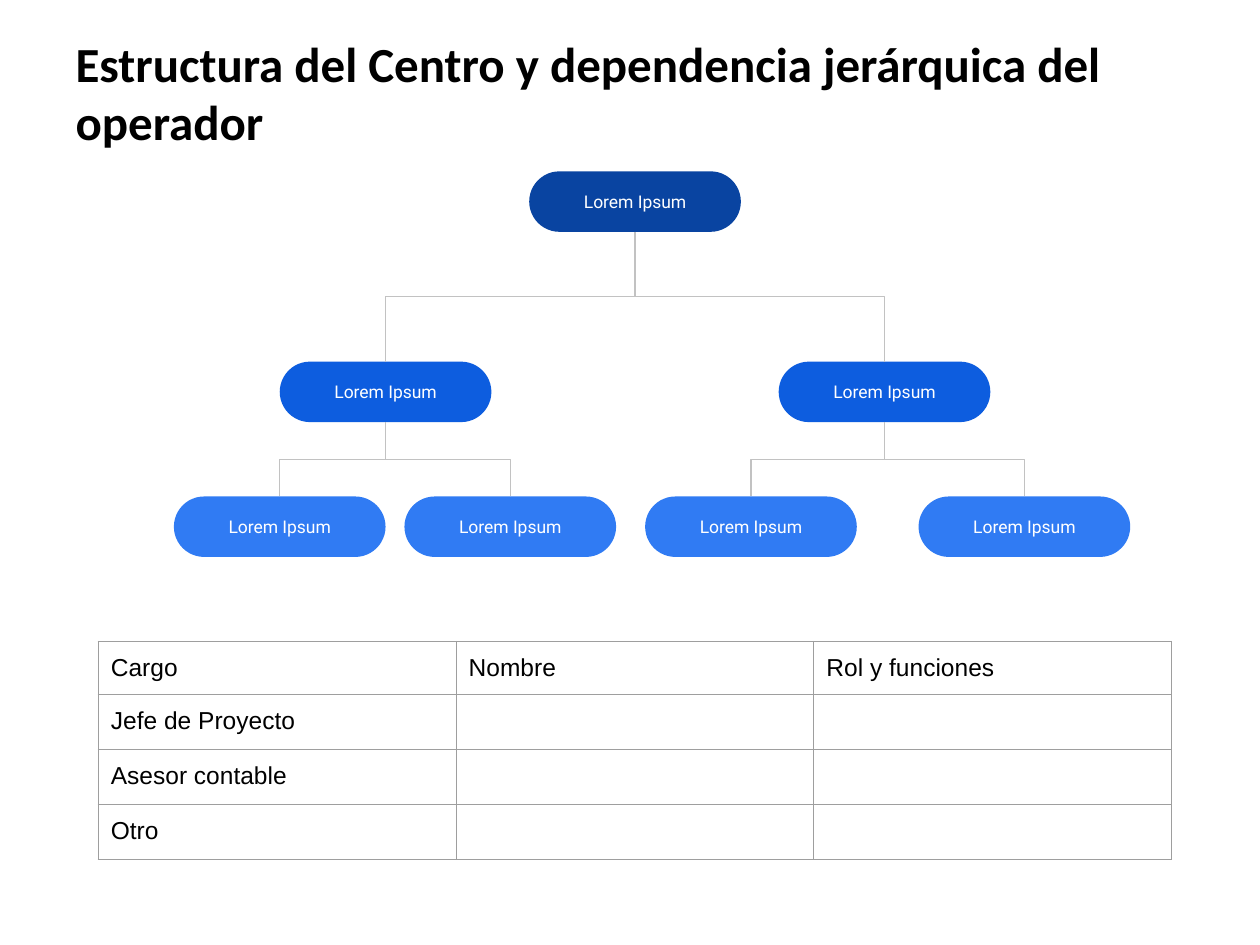
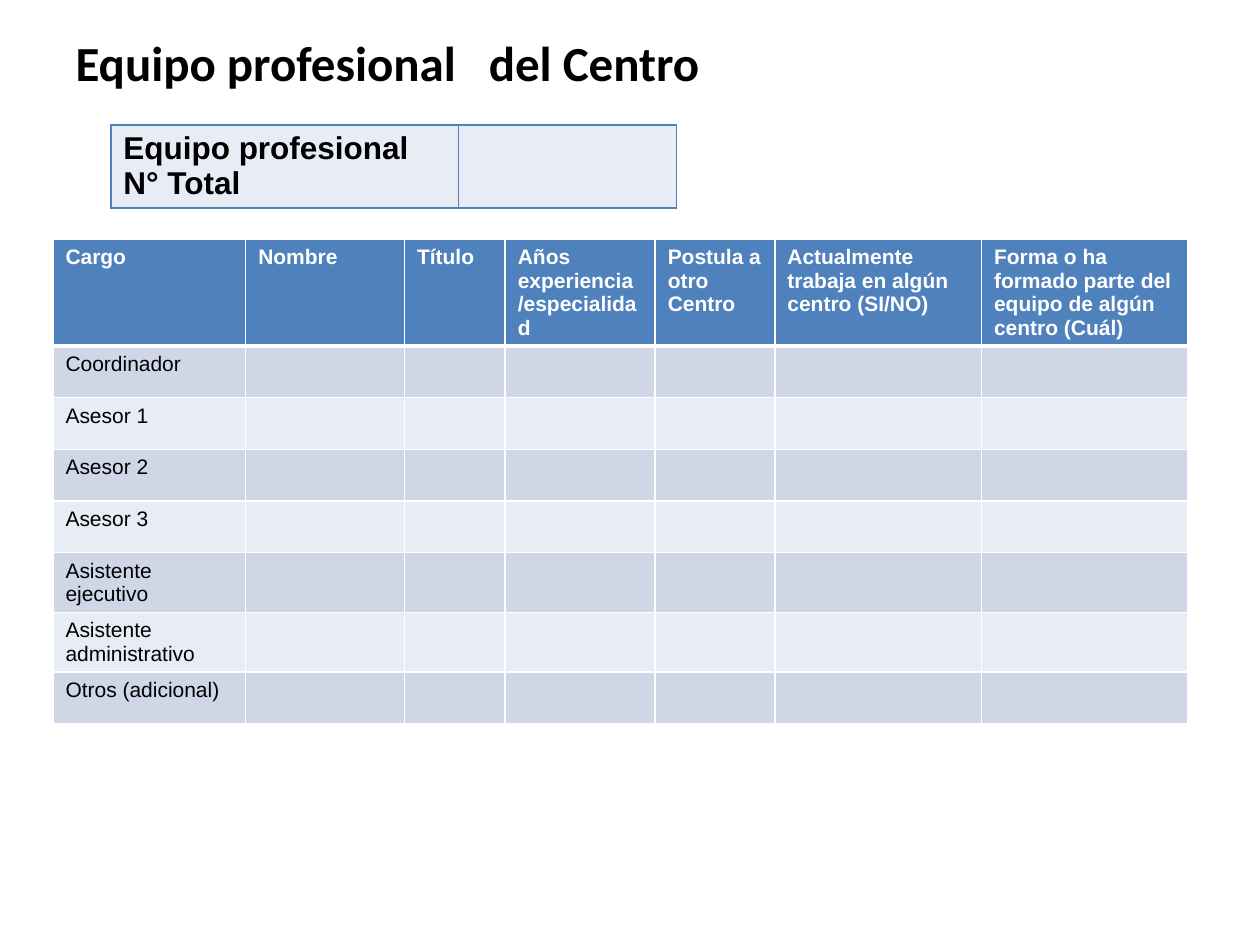
from dataclasses import dataclass
from typing import Optional

from lxml.etree import SubElement
from pptx import Presentation
from pptx.dml.color import RGBColor
from pptx.enum.shapes import MSO_CONNECTOR, MSO_SHAPE
from pptx.enum.text import MSO_ANCHOR, MSO_AUTO_SIZE, PP_ALIGN
from pptx.oxml.ns import qn
from pptx.util import Inches, Pt


@dataclass(frozen=True)
class Theme:
    black: str = "000000"
    white: str = "FFFFFF"
    levels: tuple = ("0944A1", "0D5DDF", "307BF3")
    connector: str = "C2C2C2"
    grid: str = "9E9E9E"
    header: str = "4F81BD"
    band_dark: str = "CFD7E7"
    band_light: str = "E8ECF4"
    title_font: str = "Calibri"
    body_font: str = "Arial"
    chart_font: str = "Roboto"
    title_size: int = 28
    total_size: int = 18
    roles_size: int = 14
    team_size: int = 12
    node_size: int = 10


THEME = Theme()
NODE_W, NODE_H = 1.68, 0.48
LEVEL_TOPS = (1.36, 2.87, 3.94)


@dataclass(frozen=True)
class Node:
    left: float
    level: int
    parent: Optional[int] = None  # position of the parent in NODES
    label: str = "Lorem Ipsum"


@dataclass(frozen=True)
class CellStyle:
    size: int
    border: str
    border_pt: float = 1
    fill: Optional[str] = None
    color: str = THEME.black
    bold: bool = False
    top_pt: Optional[float] = None
    bottom_pt: Optional[float] = None
    margin_y: float = 0.05


@dataclass(frozen=True)
class TableSpec:
    left: float
    top: float
    cols: tuple
    heights: tuple
    rows: tuple  # leading texts of each row; the other cells stay empty
    styles: tuple  # one CellStyle per row


NODES = (
    Node(4.2, 0),
    Node(2.22, 1, 0), Node(6.18, 1, 0),
    Node(1.38, 2, 1), Node(3.21, 2, 1),
    Node(5.12, 2, 2), Node(7.29, 2, 2),
)

# Roles table
ROLES_STYLE = CellStyle(THEME.roles_size, THEME.grid, 0.75, margin_y=0.1)
ROLES = TableSpec(
    0.78, 5.09, (2.84,) * 3, (0.42,) * 4,
    (("Cargo", "Nombre", "Rol y funciones"),
     ("Jefe de Proyecto",), ("Asesor contable",), ("Otro",)),
    (ROLES_STYLE,) * 4,
)

# Headcount table
TOTAL = TableSpec(
    0.88, 0.99, (2.76, 1.73), (0.66,),
    (("Equipo profesional\nN° Total",),),
    (CellStyle(THEME.total_size, THEME.header, fill=THEME.band_light, bold=True),),
)

# Team table: header, then alternating bands
TEAM_ROLES = ("Coordinador", "Asesor 1", "Asesor 2", "Asesor 3",
              "Asistente ejecutivo", "Asistente administrativo",
              "Otros (adicional)")
TEAM_HEADER = CellStyle(THEME.team_size, THEME.white, fill=THEME.header,
                        color=THEME.white, bold=True, bottom_pt=3)
TEAM_BANDS = tuple(
    CellStyle(THEME.team_size, THEME.white,
              fill=THEME.band_light if i % 2 else THEME.band_dark,
              top_pt=None if i else 3)
    for i in range(len(TEAM_ROLES)))
TEAM = TableSpec(
    0.42, 1.9, (1.53, 1.26, 0.8, 1.19, 0.95, 1.64, 1.64),
    (0.84,) + (0.41,) * 4 + (0.47,) * 2 + (0.41,),
    (("Cargo", "Nombre", "Título", "Años experiencia /especialidad",
      "Postula a otro Centro", "Actualmente trabaja en algún centro (SI/NO)",
      "Forma o ha formado parte del equipo de algún centro (Cuál)"),)
    + tuple((role,) for role in TEAM_ROLES),
    (TEAM_HEADER,) + TEAM_BANDS,
)


def format_runs(p, font: str, size: int, color: str, bold: bool = False) -> None:
    for r in p.runs:
        r.font.name = font
        r.font.size = Pt(size)
        r.font.bold = bold
        r.font.color.rgb = RGBColor.from_string(color)


def add_titled_slide(prs, text: str, top: float, tab: Optional[float] = None):
    s = prs.slides.add_slide(prs.slide_layouts[5])
    title = s.shapes.title
    title.left, title.top = Inches(0.5), Inches(top)
    title.width, title.height = Inches(9), Inches(0.38)
    tf = title.text_frame
    tf.text = text
    tf.word_wrap = True
    tf.auto_size = MSO_AUTO_SIZE.NONE
    tf.vertical_anchor = MSO_ANCHOR.MIDDLE
    p = tf.paragraphs[0]
    p.alignment = PP_ALIGN.LEFT
    if tab is not None:
        tabs = SubElement(p._p.get_or_add_pPr(), qn("a:tabLst"))
        SubElement(tabs, qn("a:tab"), pos=str(Inches(tab)), algn="l")
    format_runs(p, THEME.title_font, THEME.title_size, THEME.black, True)
    return s


def add_node(s, node: Node):
    sp = s.shapes.add_shape(
        MSO_SHAPE.ROUNDED_RECTANGLE, Inches(node.left),
        Inches(LEVEL_TOPS[node.level]), Inches(NODE_W), Inches(NODE_H))
    sp.adjustments[0] = 0.5
    sp.shadow.inherit = False
    sp.fill.solid()
    sp.fill.fore_color.rgb = RGBColor.from_string(THEME.levels[node.level])
    sp.line.fill.background()
    tf = sp.text_frame
    tf.text = node.label
    tf.word_wrap = True
    tf.vertical_anchor = MSO_ANCHOR.MIDDLE
    tf.margin_top = tf.margin_bottom = Inches(0.1)
    p = tf.paragraphs[0]
    p.alignment = PP_ALIGN.CENTER
    format_runs(p, THEME.chart_font, THEME.node_size, THEME.white)
    return sp


def join_nodes(s, parent, child) -> None:
    """Elbow from the parent's bottom to the child's top, vertical first."""
    x1, y1 = parent.left + parent.width // 2, parent.top + parent.height
    x2, y2 = child.left + child.width // 2, child.top
    c = s.shapes.add_connector(MSO_CONNECTOR.ELBOW, x1, y1, x2, y2)
    c.begin_connect(parent, 2)
    c.end_connect(child, 0)
    # The elbow is turned a quarter, so its width spans the vertical gap
    c.width, c.height = y2 - y1, abs(x2 - x1)
    c.left = (x1 + x2 - c.width) // 2
    c.top = (y1 + y2 - c.height) // 2
    xfrm = c._element.spPr.find(qn("a:xfrm"))
    to_right = x2 > x1
    xfrm.set("rot", "16200000" if to_right else "5400000")
    xfrm.set("flipH", "1" if to_right else "0")
    c.line.color.rgb = RGBColor.from_string(THEME.connector)
    c.line.width = Pt(0.75)
    SubElement(c._element.spPr, qn("a:effectLst"))


def set_borders(cell, style: CellStyle) -> None:
    tc_pr = cell._tc.get_or_add_tcPr()
    widths = {"L": None, "R": None, "T": style.top_pt, "B": style.bottom_pt}
    for side, width in widths.items():
        ln = SubElement(tc_pr, qn(f"a:ln{side}"),
                        w=str(Pt(width or style.border_pt)))
        fill = SubElement(ln, qn("a:solidFill"))
        SubElement(fill, qn("a:srgbClr"), val=style.border)


def fill_cell(cell, text: str, style: CellStyle) -> None:
    set_borders(cell, style)
    if style.fill:
        cell.fill.solid()
        cell.fill.fore_color.rgb = RGBColor.from_string(style.fill)
    else:
        cell.fill.background()
    cell.margin_left = cell.margin_right = Inches(0.1)
    cell.margin_top = cell.margin_bottom = Inches(style.margin_y)
    cell.text_frame.text = text
    for p in cell.text_frame.paragraphs:
        format_runs(p, THEME.body_font, style.size, style.color, style.bold)
        if not text:  # keeps empty cells from stretching the row
            SubElement(p._p, qn("a:endParaRPr"), sz=str(style.size * 100))


def add_grid(s, spec: TableSpec) -> None:
    table = s.shapes.add_table(
        len(spec.rows), len(spec.cols), Inches(spec.left), Inches(spec.top),
        Inches(sum(spec.cols)), Inches(sum(spec.heights))).table
    table.first_row = table.horz_banding = False
    for column, width in zip(table.columns, spec.cols):
        column.width = Inches(width)
    for i, (texts, style) in enumerate(zip(spec.rows, spec.styles)):
        table.rows[i].height = Inches(spec.heights[i])
        for j in range(len(spec.cols)):
            text = texts[j] if j < len(texts) else ""
            fill_cell(table.cell(i, j), text, style)


def main() -> None:
    prs = Presentation()
    prs.slide_width, prs.slide_height = Inches(10), Inches(7.5)

    # Organisation chart and roles
    s = add_titled_slide(
        prs, "Estructura del Centro y dependencia jerárquica del operador", 0.54)
    shapes = [add_node(s, node) for node in NODES]
    for node, sp in zip(NODES, shapes):
        if node.parent is not None:
            join_nodes(s, shapes[node.parent], sp)
    add_grid(s, ROLES)

    # Professional team
    s = add_titled_slide(prs, "Equipo profesional\tdel Centro", 0.3, tab=3.28)
    add_grid(s, TOTAL)
    add_grid(s, TEAM)

    prs.save("out.pptx")


if __name__ == "__main__":
    main()
